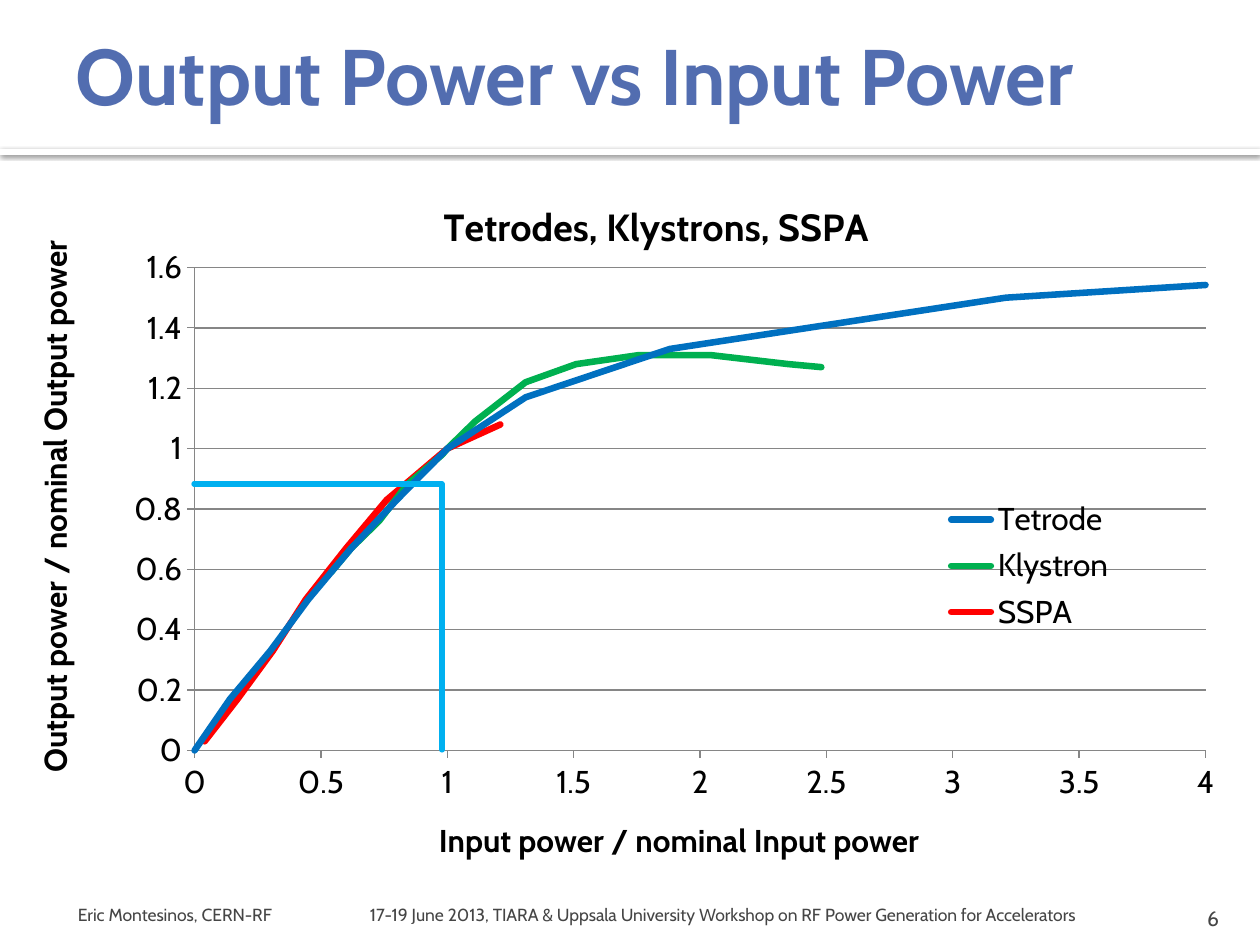
"""Builds the slide that charts output power against input power."""
from lxml.etree import SubElement
from pptx import Presentation
from pptx.chart.data import XyChartData
from pptx.dml.color import RGBColor
from pptx.enum.chart import XL_CHART_TYPE, XL_LEGEND_POSITION, XL_TICK_MARK
from pptx.enum.shapes import MSO_CONNECTOR, MSO_SHAPE
from pptx.enum.text import MSO_ANCHOR, PP_ALIGN
from pptx.oxml.ns import qn
from pptx.util import Emu, Pt

PX = 914400 // 126
FONT = "Cabin"
BLACK, GREY, GRID = "000000", "454545", "868686"

TEXTS = [
    {"text": "Output Power vs Input Power", "place": (63, 19, 1134, 110),
     "insets": (13, 6, 13, 6), "anchor": MSO_ANCHOR.MIDDLE, "align": PP_ALIGN.LEFT,
     "font": {"size": Pt(45), "bold": True}, "color": "526DB0"},
    {"text": "Eric Montesinos, CERN-RF", "place": (63, 893, 294, 38),
     "insets": (15, 6, 6, 0), "anchor": MSO_ANCHOR.MIDDLE, "align": PP_ALIGN.LEFT,
     "font": {"size": Pt(10)}, "color": GREY},
    {"text": "17-19 June 2013, TIARA & Uppsala University Workshop on RF Power "
             "Generation for Accelerators", "place": (364, 893, 759, 38),
     "insets": (6, 6, 6, 0), "anchor": MSO_ANCHOR.MIDDLE, "align": PP_ALIGN.LEFT,
     "font": {"size": Pt(10)}, "color": GREY},
    {"text": "6", "place": (1131, 893, 101, 38),
     "insets": (13, 6, 13, 0), "anchor": MSO_ANCHOR.BOTTOM, "align": PP_ALIGN.RIGHT,
     "font": {"size": Pt(12)}, "color": GREY},
]
CHART_PLACE = (15, 193, 1230, 697)
CHART_TITLE = "Tetrodes, Klystrons, SSPA"
INPUT_TITLE = "Input power / nominal Input power "
OUTPUT_TITLE = "Output power / nominal Output power"
SERIES = [
    ("Tetrode", "0070C0",
     (0, 0.14, 0.3, 0.45, 0.62, 0.8, 1, 1.31, 1.88, 3.21, 6.4),
     (0, 0.17, 0.33, 0.5, 0.67, 0.83, 1, 1.17, 1.33, 1.5, 1.67)),
    ("Klystron", "00B050",
     (0.54, 0.62, 0.73, 0.84, 0.98, 1, 1.11, 1.31, 1.51, 1.76, 2.04, 2.35, 2.48),
     (0.59, 0.67, 0.76, 0.88, 0.98, 1, 1.09, 1.22, 1.28, 1.31, 1.31, 1.28, 1.27)),
    ("SSPA", "FF0000",
     (0.04, 0.17, 0.31, 0.44, 0.6, 0.76, 1, 1.21),
     (0.03, 0.17, 0.33, 0.5, 0.67, 0.83, 1, 1.08)),
]
GUIDES = [(194, 484, 442, 484), (442, 750, 442, 484)]
BAND_PLACE = (0, 149, 1260, 6)


def scaled(lengths):
    return [Emu(length * PX) for length in lengths]


def rgb(color):
    return RGBColor.from_string(color)


def apply(target, values):
    for name, value in values.items():
        setattr(target, name, value)


def style_font(font, color, values):
    apply(font, {"name": FONT, **values})
    font.color.rgb = rgb(color)


def style_round_line(line, color, width):
    line.color.rgb = rgb(color)
    line.width = Pt(width)
    line._get_or_add_ln().set("cap", "rnd")


def add_band(page):
    band = page.shapes.add_shape(MSO_SHAPE.RECTANGLE, *scaled(BAND_PLACE))
    band.fill.solid()
    band.fill.fore_color.rgb = rgb("FFFFFF")
    band.line.fill.background()
    effects = SubElement(band._element.spPr, qn("a:effectLst"))
    shadow = SubElement(effects, qn("a:outerShdw"), blurRad=str(Pt(2.5)),
                        dist=str(Pt(0.8)), dir="5400000", algn="t", rotWithShape="0")
    color = SubElement(shadow, qn("a:srgbClr"), val=BLACK)
    SubElement(color, qn("a:alpha"), val="60000")


def add_text(page, item):
    frame = page.shapes.add_textbox(*scaled(item["place"])).text_frame
    sides = ("margin_left", "margin_top", "margin_right", "margin_bottom")
    apply(frame, {"word_wrap": True, "vertical_anchor": item["anchor"],
                  **dict(zip(sides, scaled(item["insets"])))})
    para = frame.paragraphs[0]
    para.alignment = item["align"]
    span = para.add_run()
    span.text = item["text"]
    style_font(span.font, item["color"], item["font"])


def set_layout(element, place, inner=False):
    for old in element.findall(qn("c:layout")):
        element.remove(old)
    layout = SubElement(element, qn("c:layout"))
    overlay = element.find(qn("c:overlay"))
    if overlay is None:
        element.insert(0, layout)
    else:
        overlay.addprevious(layout)
    manual = SubElement(layout, qn("c:manualLayout"))
    if inner:
        SubElement(manual, qn("c:layoutTarget"), val="inner")
    for side in "xy":
        SubElement(manual, qn(f"c:{side}Mode"), val="edge")
    for side, share in zip("xywh", place):
        SubElement(manual, qn(f"c:{side}"), val=str(share))


def set_title(title, text, size, place):
    span = title.text_frame.paragraphs[0].add_run()
    span.text = text
    style_font(span.font, BLACK, {"size": Pt(size), "bold": True})
    set_layout(title._element, place)


def power_data():
    """Puts all series on one shared input column, with gaps between them."""
    data = XyChartData()
    inputs = []
    for _, _, series_inputs, _ in SERIES:
        inputs += [None, *series_inputs]
    start = 1
    for name, _, _, outputs in SERIES:
        series = data.add_series(name)
        column = [None] * len(inputs)
        column[start:start + len(outputs)] = outputs
        for point in zip(inputs, column):
            series.add_data_point(*point)
        start += len(outputs) + 1
    return data


def drop_empty_points(chart):
    for point in list(chart._chartSpace.iter(qn("c:pt"))):
        if point.findtext(qn("c:v")) in ("None", "", None):
            point.getparent().remove(point)


def add_power_chart(page):
    chart = page.shapes.add_chart(XL_CHART_TYPE.XY_SCATTER_LINES_NO_MARKERS,
                                  *scaled(CHART_PLACE), power_data()).chart
    drop_empty_points(chart)
    style_font(chart.font, BLACK, {"size": Pt(18)})
    chart.plots[0].vary_by_categories = False
    for series, (_, color, _, _) in zip(chart.plots[0].series, SERIES):
        series.smooth = False
        style_round_line(series.format.line, color, 3.75)

    axes = [
        (chart.category_axis, INPUT_TITLE, (0.34, 0.89), False,
         {"maximum_scale": 4, "major_unit": 0.5}),
        (chart.value_axis, OUTPUT_TITLE, (0.01, 0.06), True,
         {"maximum_scale": 1.6, "major_unit": 0.2}),
    ]
    for axis, title, place, grid, scale in axes:
        apply(axis, {"minimum_scale": 0, "major_tick_mark": XL_TICK_MARK.OUTSIDE,
                     "minor_tick_mark": XL_TICK_MARK.NONE,
                     "has_major_gridlines": grid, **scale})
        apply(axis.tick_labels, {"number_format": "General",
                                 "number_format_is_linked": False})
        axis.format.line.color.rgb = rgb(GRID)
        set_title(axis.axis_title, title, 18, place)
    chart.value_axis.major_gridlines.format.line.color.rgb = rgb(GRID)
    turned = chart.value_axis.axis_title.text_frame._txBody.bodyPr
    apply_turn = {"rot": "-5400000", "vert": "horz"}
    for name, value in apply_turn.items():
        turned.set(name, value)

    chart.has_title = True
    set_title(chart.chart_title, CHART_TITLE, 21.6, (0.343, 0))
    chart.chart_title._element.find(qn("c:overlay")).set("val", "1")
    chart.has_legend = True
    apply(chart.legend, {"position": XL_LEGEND_POSITION.RIGHT, "include_in_layout": False})
    set_layout(chart.legend._element, (0.75, 0.43, 0.15, 0.21))
    plot_area = chart._chartSpace.chart.plotArea
    set_layout(plot_area, (0.146, 0.107, 0.822, 0.693), inner=True)


def add_guide(page, ends):
    guide = page.shapes.add_connector(MSO_CONNECTOR.STRAIGHT, *scaled(ends))
    style_round_line(guide.line, "00B0F0", 3)
    SubElement(guide._element.spPr, qn("a:effectLst"))


def main():
    deck = Presentation()
    deck.slide_width, deck.slide_height = scaled((1260, 945))
    page = deck.slides.add_slide(deck.slide_layouts[6])
    add_band(page)
    for item in TEXTS:
        add_text(page, item)
    add_power_chart(page)
    for ends in GUIDES:
        add_guide(page, ends)
    deck.save("out.pptx")


if __name__ == "__main__":
    main()
